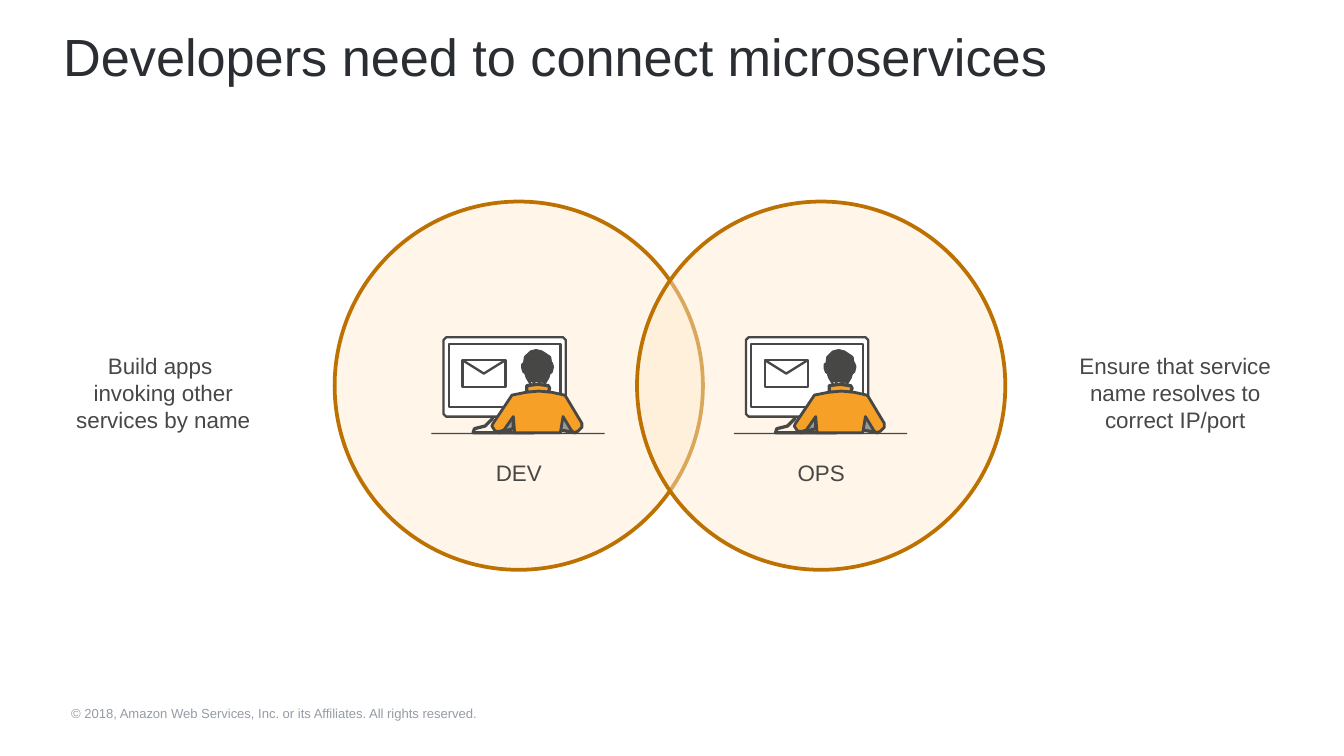
"""Build the slide showing how developers and operators connect microservices."""
from dataclasses import dataclass

import pptx
import pptx.dml.color
import pptx.enum.shapes
import pptx.enum.text
import pptx.oxml
import pptx.oxml.ns
import pptx.util
from pptx.util import Inches

INK = "474746"
ORANGE = "F7A028"
GREY = "999A98"
CIRCLE_SIZE = 2.74
CIRCLE_TOP = 1.5
LABEL_WIDTH = 1.85


@dataclass(frozen=True)
class Outline:
    points: list[tuple[float, float]]
    fill: str | None = None
    width: float = 1.25
    closed: bool = True


@dataclass(frozen=True)
class Role:
    name: str
    circle_left: float
    task_left: float
    task: list[str]


ROLES = [
    Role("DEV", 2.49, 0.29, ["Build apps ", "invoking other services by name"]),
    Role("OPS", 4.74, 7.82, ["Ensure that service name resolves to correct IP/port"]),
]

COMPUTER = [
    Outline([(1.31, 1.53), (1.2, 1.53), (1.19, 1.57), (1.17, 1.62), (1.12, 1.67),
             (1.04, 1.69), (1.03, 1.72), (1.48, 1.72), (1.47, 1.69), (1.39, 1.67),
             (1.34, 1.62), (1.32, 1.57)], width=1.75),
    Outline([(1.72, 1.58), (1.7, 1.6), (0.83, 1.6), (0.81, 1.58), (0.81, 1.03),
             (0.83, 1.01), (1.7, 1.01), (1.72, 1.03)], "FFFFFF"),
    Outline([(0.85, 1.06), (1.68, 1.06), (1.68, 1.53), (0.85, 1.53)]),
    Outline([(1.22, 1.72), (1.33, 1.69), (1.33, 1.59), (1.26, 1.6)], GREY, 1.75),
    Outline([(1.79, 1.72), (1.68, 1.7), (1.67, 1.62), (1.77, 1.62)], GREY, 1.75),
]

PERSON = [
    Outline([(1.61, 1.24), (1.6, 1.16), (1.54, 1.12), (1.47, 1.12), (1.42, 1.16),
             (1.41, 1.24), (1.43, 1.31), (1.46, 1.36), (1.47, 1.42), (1.56, 1.42),
             (1.56, 1.36), (1.59, 1.31)]),
    Outline([(1.62, 1.23), (1.61, 1.27), (1.6, 1.23), (1.61, 1.2)], width=1.75),
    Outline([(1.41, 1.24), (1.41, 1.27), (1.4, 1.24), (1.4, 1.21)], width=1.75),
    Outline([(1.54, 1.12), (1.5, 1.11), (1.46, 1.12), (1.42, 1.16), (1.41, 1.24),
             (1.42, 1.27), (1.45, 1.33), (1.47, 1.33), (1.48, 1.31), (1.48, 1.34),
             (1.5, 1.33), (1.53, 1.34), (1.54, 1.31), (1.55, 1.34), (1.57, 1.32),
             (1.6, 1.27), (1.61, 1.23), (1.6, 1.16)], INK, 1.75),
    Outline([(1.59, 1.42), (1.43, 1.42), (1.43, 1.37), (1.51, 1.36), (1.59, 1.37),
             (1.6, 1.39)], ORANGE, 1.75),
    Outline([(1.84, 1.65), (1.72, 1.45), (1.71, 1.44), (1.62, 1.42), (1.52, 1.41),
             (1.42, 1.42), (1.32, 1.44), (1.18, 1.65), (1.17, 1.67), (1.19, 1.7),
             (1.2, 1.71), (1.23, 1.71), (1.26, 1.7), (1.33, 1.6), (1.34, 1.72),
             (1.68, 1.72), (1.7, 1.6), (1.76, 1.7), (1.78, 1.72), (1.81, 1.71),
             (1.82, 1.7), (1.84, 1.68)], ORANGE, 1.5),
    Outline([(0.95, 1.18), (1.27, 1.18), (1.27, 1.38), (0.95, 1.38)]),
    Outline([(0.95, 1.18), (1.11, 1.28), (1.27, 1.18)], closed=False),
]


def rgb(value: str) -> pptx.dml.color.RGBColor:
    """Turn a hex string into a colour."""
    return pptx.dml.color.RGBColor.from_string(value)


def style_shape(shape, fill: str | None, line: str | None, width: float = 1) -> None:
    """Set the fill and line of a shape and remove its shadow."""
    shape.shadow.inherit = False
    if fill:
        shape.fill.solid()
        shape.fill.fore_color.rgb = rgb(fill)
    else:
        shape.fill.background()
    if line:
        shape.line.color.rgb = rgb(line)
        shape.line.width = pptx.util.Pt(width)
    else:
        shape.line.fill.background()


def write_lines(para, lines: list[str], size: float, color: str) -> None:
    """Write the lines as runs separated by line breaks."""
    for index, line in enumerate(lines):
        if index:
            para.add_line_break()
        span = para.add_run()
        span.text = line
        span.font.name = "Arial"
        span.font.size = pptx.util.Pt(size)
        span.font.color.rgb = rgb(color)


def draw_label(slide, left: float, top: float, height: float, lines: list[str]) -> None:
    """Draw a centred label."""
    box = slide.shapes.add_textbox(
        Inches(left), Inches(top), Inches(LABEL_WIDTH), Inches(height))
    box.text_frame.word_wrap = True
    para = box.text_frame.paragraphs[0]
    para.alignment = pptx.enum.text.PP_ALIGN.CENTER
    write_lines(para, lines, 12, INK)


def draw_outline(slide, left: float, top: float, outline: Outline) -> None:
    """Draw an outline relative to the corner of its circle."""
    points = [(Inches(left + x), Inches(top + y)) for x, y in outline.points]
    builder = slide.shapes.build_freeform(*points[0])
    builder.add_line_segments(points[1:], close=outline.closed)
    style_shape(builder.convert_to_shape(), outline.fill, INK, outline.width)


def draw_role(slide, role: Role) -> None:
    """Draw a translucent circle with a person at a computer, and its labels."""
    kinds = pptx.enum.shapes.MSO_SHAPE
    left = role.circle_left
    circle = slide.shapes.add_shape(
        kinds.OVAL, Inches(left), Inches(CIRCLE_TOP),
        Inches(CIRCLE_SIZE), Inches(CIRCLE_SIZE))
    style_shape(circle, "FFEBCC", "BD7100", 2)
    color = circle.element.spPr.find(".//" + pptx.oxml.ns.qn("a:srgbClr"))
    color.append(pptx.oxml.parse_xml(
        f'<a:alpha {pptx.oxml.ns.nsdecls("a")} val="45000"/>'))

    for outline in COMPUTER:
        draw_outline(slide, left, CIRCLE_TOP, outline)
    desk = slide.shapes.add_shape(
        kinds.RECTANGLE, Inches(left + 0.72), Inches(3.22), Inches(1.29), Inches(0.01))
    style_shape(desk, INK, None)
    for outline in PERSON:
        draw_outline(slide, left, CIRCLE_TOP, outline)

    draw_label(slide, left + (CIRCLE_SIZE - LABEL_WIDTH) / 2, 3.37, 0.37, [role.name])
    draw_label(slide, role.task_left, 2.57, 0.71, role.task)


def draw_title(slide, text: str) -> None:
    """Place and format the slide title."""
    title = slide.shapes.title
    title.left, title.top = Inches(0.37), Inches(0.13)
    title.width, title.height = Inches(8.97), Inches(0.6)
    frame = title.text_frame
    frame.auto_size = pptx.enum.text.MSO_AUTO_SIZE.NONE
    frame.vertical_anchor = pptx.enum.text.MSO_ANCHOR.TOP
    para = frame.paragraphs[0]
    para.alignment = pptx.enum.text.PP_ALIGN.LEFT
    write_lines(para, [text], 28, "2A2D32")


def draw_copyright(slide, text: str) -> None:
    """Draw the copyright line at the foot of the slide."""
    box = slide.shapes.add_textbox(Inches(0.53), Inches(5.25), Inches(3.31), Inches(0.12))
    frame = box.text_frame
    frame.word_wrap = True
    frame.margin_left = frame.margin_right = frame.margin_top = frame.margin_bottom = 0
    write_lines(frame.paragraphs[0], [text], 7, "959CA6")


def main() -> None:
    """Build and save the deck."""
    deck = pptx.Presentation()
    deck.slide_width = Inches(10)
    deck.slide_height = Inches(10 * 9 / 16)
    slide = deck.slides.add_slide(deck.slide_layouts.get_by_name("Title Only"))
    draw_title(slide, "Developers need to connect microservices")
    for role in ROLES:
        draw_role(slide, role)
    draw_copyright(
        slide, "© 2018, Amazon Web Services, Inc. or its Affiliates. All rights reserved.")
    deck.save("out.pptx")


if __name__ == "__main__":
    main()
